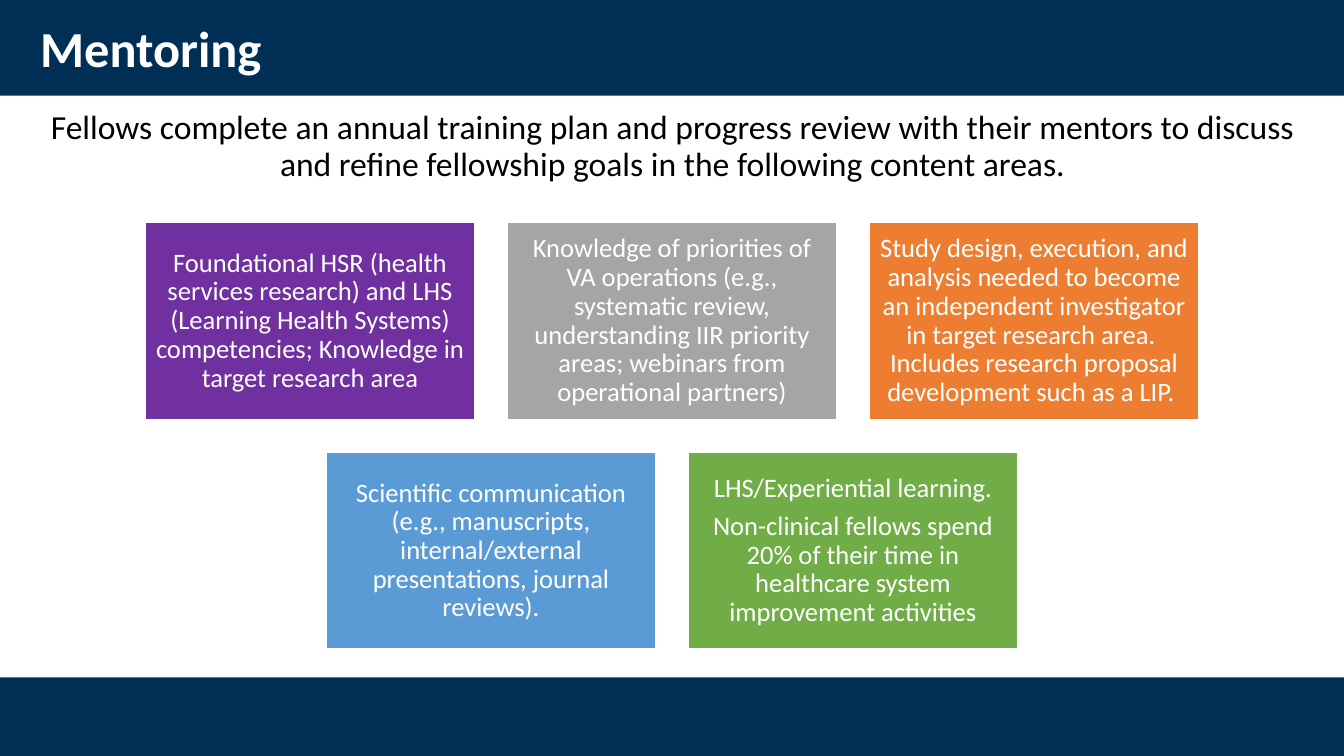
import pptx
import pptx.dml.color
import pptx.enum.shapes
import pptx.enum.text
import pptx.util
from pptx.util import Inches

TITLE = "Mentoring"
INTRO = ("Fellows complete an annual training plan and progress review with their "
         "mentors to discuss and refine fellowship goals in the following content areas.")
AREA_ROWS = [
    [
        ("7030A0", ["Foundational HSR (health services research) and LHS (Learning Health "
                    "Systems) competencies; Knowledge in target research area"]),
        ("A5A5A5", ["Knowledge of priorities of VA operations (e.g., systematic review, "
                    "understanding IIR priority areas; webinars from operational partners)"]),
        ("ED7D31", ["Study design, execution, and analysis needed to become an independent "
                    "investigator in target research area.  Includes research proposal "
                    "development such as a LIP. "]),
    ],
    [
        ("5B9BD5", ["Scientific communication (e.g., manuscripts, internal/external "
                    "presentations, journal reviews)."]),
        ("70AD47", ["LHS/Experiential learning.",
                    "Non-clinical fellows spend 20% of their time in healthcare system "
                    "improvement activities"]),
    ],
]
NAVY, WHITE, BLACK = "002F56", "FFFFFF", "000000"
FONT = "Calibri"
SLIDE_W, SLIDE_H = 13.33, 7.5
BANDS = [(0, 0.95), (6.72, 0.8)]
CARD_W, CARD_H, GAP = 3.26, 1.95, 0.33
CARDS_TOP = 2.21

ALIGN = pptx.enum.text.PP_ALIGN
ANCHOR = pptx.enum.text.MSO_ANCHOR


def color(hex_code):
    return pptx.dml.color.RGBColor.from_string(hex_code)


def add_rect(slide, left, top, width, height, fill, line=None):
    rect = slide.shapes.add_shape(
        pptx.enum.shapes.MSO_SHAPE.RECTANGLE,
        Inches(left), Inches(top), Inches(width), Inches(height))
    rect.shadow.inherit = False
    rect.fill.solid()
    rect.fill.fore_color.rgb = color(fill)
    if line:
        rect.line.color.rgb = color(line)
        rect.line.width = pptx.util.Pt(1)
    else:
        rect.line.fill.background()
    return rect


def write(frame, paragraphs, size, ink, align, anchor, bold=False):
    """Fill a text frame, with a gap of 35% of the text size between paragraphs."""
    frame.word_wrap = True
    frame.vertical_anchor = anchor
    for index, text in enumerate(paragraphs):
        paragraph = frame.add_paragraph() if index else frame.paragraphs[0]
        paragraph.alignment = align
        paragraph.line_spacing = 0.9
        if index:
            paragraph.space_before = pptx.util.Pt(round(size * 0.35, 1))
        run = paragraph.add_run()
        run.text = text
        run.font.name = FONT
        run.font.size = pptx.util.Pt(size)
        run.font.bold = bold
        run.font.color.rgb = color(ink)


def add_text(slide, left, top, width, height, *style):
    box = slide.shapes.add_textbox(
        Inches(left), Inches(top), Inches(width), Inches(height))
    write(box.text_frame, *style)


def add_card(slide, left, top, fill, paragraphs):
    frame = add_rect(slide, left, top, CARD_W, CARD_H, fill, WHITE).text_frame
    frame.margin_left = frame.margin_right = Inches(0.08)
    frame.margin_top = frame.margin_bottom = Inches(0.08)
    write(frame, paragraphs, 19, WHITE, ALIGN.CENTER, ANCHOR.MIDDLE)


def main():
    deck = pptx.Presentation()
    deck.slide_width, deck.slide_height = Inches(SLIDE_W), Inches(SLIDE_H)
    slide = deck.slides.add_slide(deck.slide_layouts[6])

    for top, height in BANDS:
        add_rect(slide, 0, top, SLIDE_W, height, NAVY)
    add_text(slide, 0.3, 0.17, 11.5, 0.68,
             [TITLE], 36, WHITE, ALIGN.LEFT, ANCHOR.MIDDLE, True)
    add_text(slide, 0.16, 1.05, 13.02, 0.9,
             [INTRO], 24, BLACK, ALIGN.CENTER, ANCHOR.TOP)

    for row, areas in enumerate(AREA_ROWS):
        row_width = len(areas) * (CARD_W + GAP) - GAP
        row_left = (SLIDE_W - row_width) / 2
        for column, (fill, paragraphs) in enumerate(areas):
            add_card(slide, row_left + column * (CARD_W + GAP),
                     CARDS_TOP + row * (CARD_H + GAP), fill, paragraphs)

    deck.save("out.pptx")


if __name__ == "__main__":
    main()
